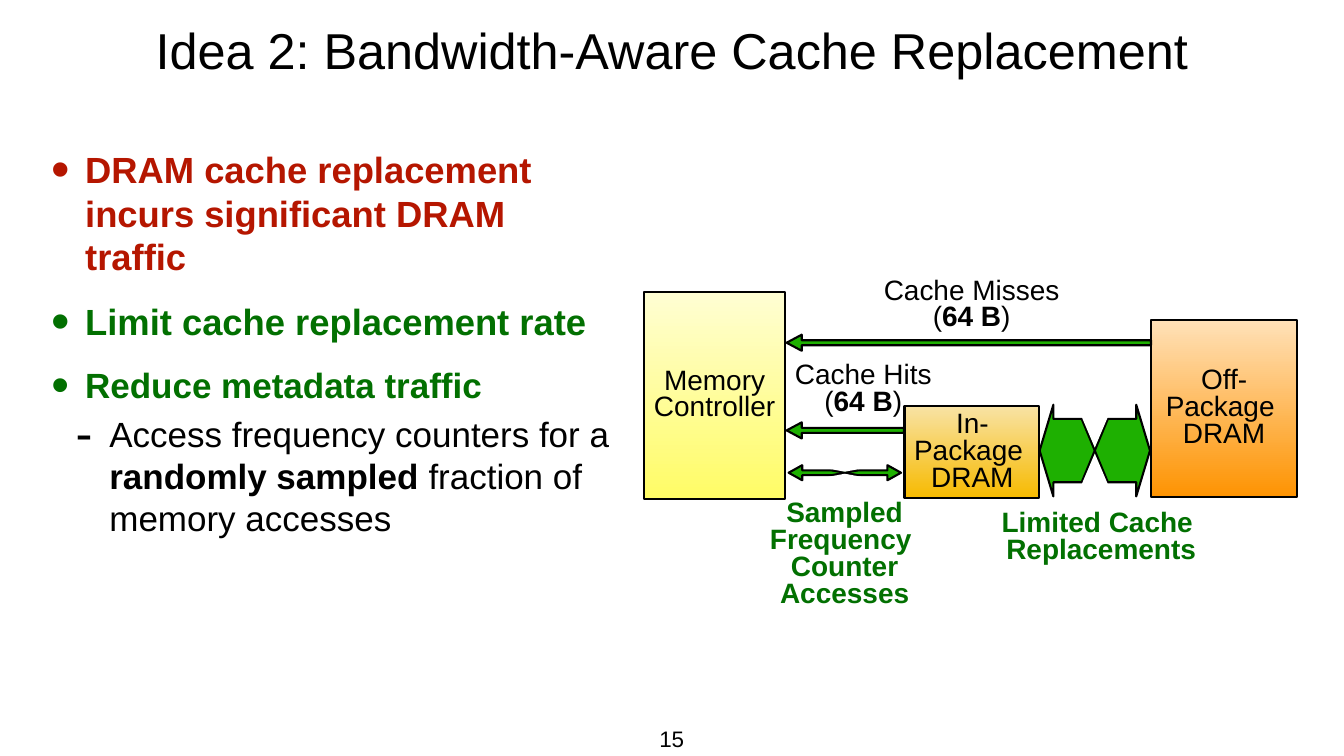
from dataclasses import dataclass

from lxml.etree import SubElement
from pptx import Presentation
from pptx.dml.color import RGBColor
from pptx.enum.shapes import MSO_CONNECTOR as Link, MSO_SHAPE as Shape
from pptx.enum.text import MSO_ANCHOR as Anchor, PP_ALIGN as Align
from pptx.oxml.ns import qn
from pptx.util import Inches, Pt


@dataclass(frozen=True)
class Theme:
    """Colours, font and type sizes of the slide."""
    font: str = "Arial"
    black: str = "000000"
    white: str = "FFFFFF"
    red: str = "B51600"
    green: str = "027001"
    arrow: str = "1EB001"
    yellow: tuple = ("FFFED3", "FFFC66")
    gold: tuple = ("F8E3A5", "F7BA01")
    orange: tuple = ("FFE1B8", "FE9301")
    title: int = 72
    lead: int = 52
    body: int = 50
    label: int = 40
    number: int = 32
    line: int = 3


THEME = Theme()


def rgb(code):
    """Turn a hex code into a colour."""
    return RGBColor.from_string(code)


def add_run(para, text, size, color, bold=False):
    """Append one formatted run."""
    run = para.add_run()
    run.text = text
    font = run.font
    font.name, font.size, font.bold = THEME.font, Pt(size), bold
    font.color.rgb = rgb(color)


def set_frame(shape, anchor, wrap):
    """Set margins, anchor and wrapping, and return the frame."""
    frame = shape.text_frame
    frame.margin_left = frame.margin_right = Inches(0.08)
    frame.margin_top = frame.margin_bottom = Inches(0.08)
    frame.vertical_anchor, frame.word_wrap = anchor, wrap
    return frame


def add_box(slide, box, anchor=Anchor.TOP, wrap=True):
    """Add an empty text box and return its frame."""
    shape = slide.shapes.add_textbox(*map(Inches, box))
    return set_frame(shape, anchor, wrap)


def write_label(frame, lines, color=THEME.black, bold=False):
    """Fill a frame with centred lines; text between asterisks is bold."""
    for i, line in enumerate(lines):
        para = frame.paragraphs[0] if i == 0 else frame.add_paragraph()
        para.alignment, para.line_spacing = Align.CENTER, 0.8
        for j, part in enumerate(line.split("*")):
            if part:
                add_run(para, part, THEME.label, color, bold or j % 2 == 1)


def add_bullet(para, mark, left):
    """Give a paragraph a hanging bullet."""
    props = para._p.get_or_add_pPr()
    props.set("marL", str(Inches(left)))
    props.set("indent", str(Inches(-0.67)))
    SubElement(props, qn("a:buSzPct")).set("val", "145000")
    SubElement(props, qn("a:buFont")).set("typeface", THEME.font)
    SubElement(props, qn("a:buChar")).set("char", mark)


def paint(shape, fill, outline=True):
    """Set a solid or gradient fill and the outline."""
    shape.shadow.inherit = False
    if isinstance(fill, tuple):
        shape.fill.gradient()
        shape.fill.gradient_angle = 270
        for stop, code in zip(shape.fill.gradient_stops, fill):
            stop.color.rgb = rgb(code)
    else:
        shape.fill.solid()
        shape.fill.fore_color.rgb = rgb(fill)
    if outline:
        shape.line.color.rgb = rgb(THEME.black)
        shape.line.width = Pt(THEME.line)
    else:
        shape.line.fill.background()


def add_block(slide, box, fill):
    """Add an outlined gradient rectangle."""
    shape = slide.shapes.add_shape(Shape.RECTANGLE, *map(Inches, box))
    paint(shape, fill)
    return shape


def add_outline(slide, points, fill, outline=True):
    """Add a closed polygon."""
    spots = [(Inches(x), Inches(y)) for x, y in points]
    pen = slide.shapes.build_freeform(*spots[0])
    pen.add_line_segments(spots[1:], close=True)
    paint(pen.convert_to_shape(), fill, outline)


def add_arrow(slide, tip, end, y):
    """Add a thin block arrow that points left."""
    neck = tip + 0.3
    points = [(neck, y + 0.05), (neck, y + 0.16), (tip, y), (neck, y - 0.16),
              (neck, y - 0.05), (end, y - 0.05), (end, y + 0.05)]
    add_outline(slide, points, THEME.arrow)


def add_pinch(slide, box, body, head, wedge):
    """Add a two-way arrow whose middle narrows to a point."""
    left, top, width, height = box
    half, apex, base = wedge
    arrow = slide.shapes.add_shape(Shape.LEFT_RIGHT_ARROW, *map(Inches, box))
    arrow.adjustments[0], arrow.adjustments[1] = body, head
    paint(arrow, THEME.arrow)
    mid, axis = left + width / 2, top + height / 2
    rise = height * body / 2
    for sign in (1, -1):
        ends = (mid - 0.26, axis + sign * rise, mid + 0.26, axis - sign * rise)
        line = slide.shapes.add_connector(Link.STRAIGHT, *map(Inches, ends))
        line.line.color.rgb = rgb(THEME.black)
        line.line.width = Pt(THEME.line)
        SubElement(line._element.spPr, qn("a:effectLst"))
    for sign in (1, -1):
        foot = axis + sign * base
        points = [(mid, axis + sign * apex), (mid + half, foot), (mid - half, foot)]
        add_outline(slide, points, THEME.white, False)


def add_title(slide, box):
    """Place the slide title."""
    para = add_box(slide, box, Anchor.MIDDLE).paragraphs[0]
    para.alignment, para.line_spacing = Align.CENTER, Pt(100)
    add_run(para, "Idea 2: Bandwidth-Aware Cache Replacement", THEME.title, THEME.black)


def add_points(slide, box):
    """Place the bullet list."""
    frame = add_box(slide, box)
    heads = [("DRAM cache replacement incurs significant DRAM traffic", THEME.lead, THEME.red),
             ("Limit cache replacement rate", THEME.lead, THEME.green),
             ("Reduce metadata traffic", THEME.body, THEME.green)]
    for i, (text, size, color) in enumerate(heads):
        para = frame.paragraphs[0] if i == 0 else frame.add_paragraph()
        para.space_before = Pt(30)
        add_bullet(para, "•", 0.67)
        add_run(para, text, size, color, True)
    para = frame.add_paragraph()
    para.level, para.space_before = 1, Pt(10)
    add_bullet(para, "-", 1.15)
    parts = ("Access frequency counters for a ", "randomly sampled",
             " fraction of memory accesses")
    for i, text in enumerate(parts):
        add_run(para, text, THEME.body, THEME.black, i == 1)


def add_diagram(slide, left, top):
    """Draw the memory blocks, the traffic arrows and their labels."""
    def at(x, y, width, height):
        """Shift a box to the diagram's corner."""
        return left + x, top + y, width, height

    memory = add_block(slide, at(0, 0.41, 2.8, 4.11), THEME.yellow)
    write_label(set_frame(memory, Anchor.MIDDLE, True), ["Memory Controller"])
    add_block(slide, at(5.17, 2.67, 2.67, 1.83), THEME.gold)
    add_block(slide, at(10.06, 0.97, 2.89, 3.52), THEME.orange)
    for end, y in ((5.16, 3.16), (10.06, 1.42)):
        add_arrow(slide, left + 2.83, left + end, top + y)
    add_pinch(slide, at(7.85, 2.65, 2.19, 1.82), 0.69, 0.15, (0.29, 0.06, 0.74))
    add_pinch(slide, at(2.87, 3.85, 2.23, 0.3), 0.32, 0.9, (0.32, 0.02, 0.08))

    off = add_box(slide, at(9.97, 1.2, 3.08, 3.06), Anchor.MIDDLE)
    write_label(off, ["Off-Package ", "DRAM"])
    plain, strong = (THEME.black, False), (THEME.green, True)
    labels = [
        ((5.16, 2.63, 2.71, 1.92), ["In-", "Package ", "DRAM"], plain),
        ((2.82, 1.68, 3.06, 1.36), ["Cache Hits", "(*64 B*)"], plain),
        ((4.59, 0, 3.82, 1.36), ["Cache Misses", "(*64 B*)"], plain),
        ((6.92, 4.6, 4.3, 1.37), ["Limited Cache ", "Replacements"], strong),
        ((2.35, 4.4, 3.26, 2.46), ["Sampled", "Frequency ", "Counter", "Accesses"], strong)]
    for box, lines, style in labels:
        write_label(add_box(slide, at(*box), Anchor.MIDDLE, False), lines, *style)


def add_number(slide, box):
    """Place the slide number."""
    para = add_box(slide, box, wrap=False).paragraphs[0]
    para.alignment = Align.CENTER
    add_run(para, "15", THEME.number, THEME.black)


def main():
    """Build and save the slide."""
    deck = Presentation()
    deck.slide_width, deck.slide_height = Inches(26.67), Inches(15)
    slide = deck.slides.add_slide(deck.slide_layouts[6])
    add_points(slide, (0.94, 2.84, 11.28, 10.97))
    add_title(slide, (1.55, -1.41, 23.57, 4.58))
    add_number(slide, (13, 14.3, 0.66, 0.69))
    add_diagram(slide, 12.78, 5.38)
    deck.save("out.pptx")


if __name__ == "__main__":
    main()
